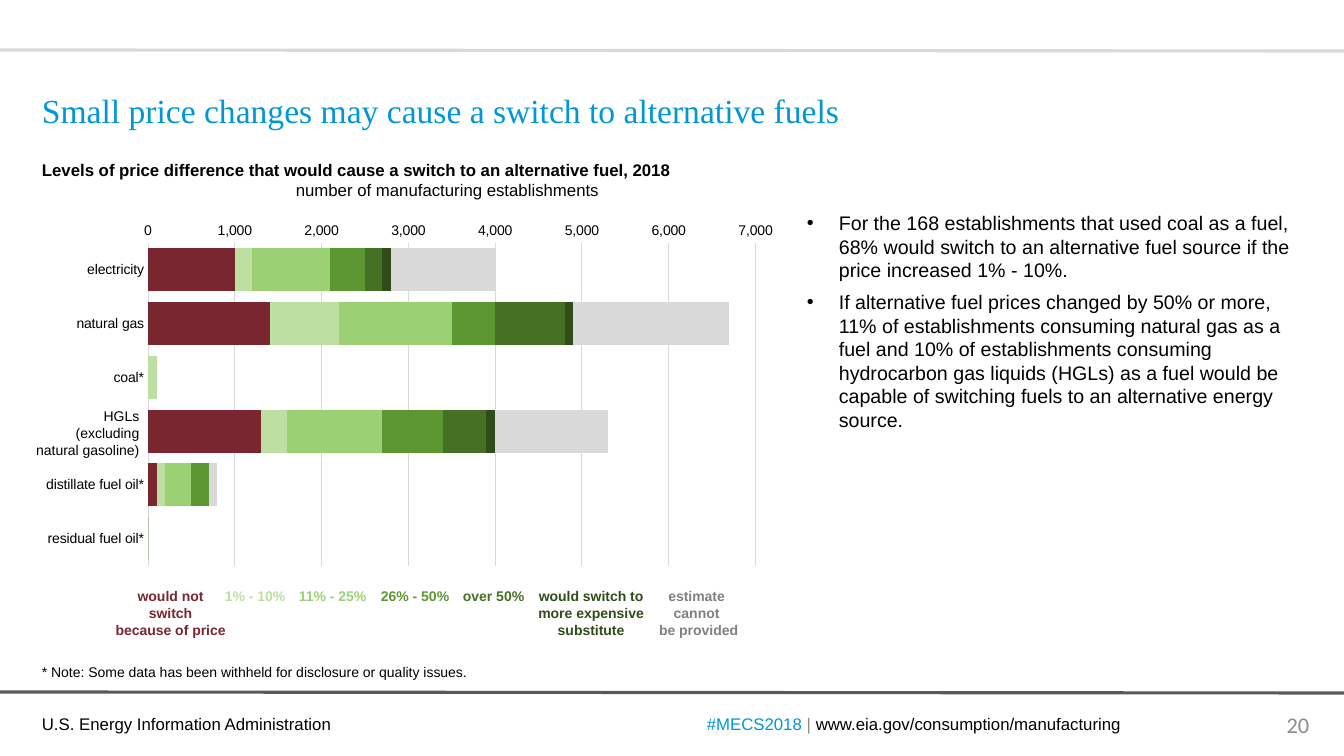
from lxml import etree
from pptx import Presentation
from pptx.chart.data import CategoryChartData
from pptx.dml.color import RGBColor
from pptx.enum.chart import XL_CHART_TYPE as ChartType, XL_TICK_MARK as TickMark
from pptx.enum.shapes import MSO_CONNECTOR as Connector
from pptx.enum.text import MSO_ANCHOR as Anchor, PP_ALIGN as Align
from pptx.oxml import parse_xml
from pptx.oxml.ns import nsdecls, qn
from pptx.util import Emu, Pt

BLACK = RGBColor(0x00, 0x00, 0x00)
BLUE = RGBColor(0x00, 0x96, 0xD7)
RULE_DARK = RGBColor(0x59, 0x59, 0x59)
LIGHT_GRAY = RGBColor(0xD9, 0xD9, 0xD9)
LABEL_GRAY = RGBColor(0x80, 0x80, 0x80)
FOOTER_GRAY = RGBColor(0x8C, 0x8C, 0x8C)
MAROON = RGBColor(0x7A, 0x26, 0x30)
GREEN_1 = RGBColor(0xBD, 0xE0, 0xA2)
GREEN_2 = RGBColor(0x9B, 0xD1, 0x74)
GREEN_3 = RGBColor(0x5D, 0x97, 0x32)
GREEN_4 = RGBColor(0x46, 0x71, 0x25)
GREEN_5 = RGBColor(0x2F, 0x4C, 0x19)

# Content
TITLE = "Small price changes may cause a switch to alternative fuels"
CHART_TITLE = "Levels of price difference that would cause a switch to an alternative fuel, 2018"
CHART_UNIT = "number of manufacturing establishments"
NOTE = "* Note: Some data has been withheld for disclosure or quality issues."
AGENCY = "U.S. Energy Information Administration"
FOOTER = [("#MECS2018 ", BLUE), ("| ", FOOTER_GRAY),
          ("www.eia.gov/consumption/manufacturing", BLACK)]
PAGE = "20"
BULLETS = [
    "For the 168 establishments that used coal as a fuel, 68% would switch to an "
    "alternative fuel source if the price increased 1% - 10%.",
    "If alternative fuel prices changed by 50% or more, 11% of establishments consuming "
    "natural gas as a fuel and 10% of establishments consuming hydrocarbon gas liquids "
    "(HGLs) as a fuel would be capable of switching fuels to an alternative energy source.",
]
FUELS = ["electricity", "natural gas", "coal*", "", "distillate fuel oil*", "residual fuel oil*"]
HGL_LABEL = ["HGLs ", "(excluding ", "natural gasoline) "]
# Name, bar colour, values by fuel
RESPONSES = [
    ("Series 1", MAROON, (1000, 1400, 0, 1300, 100, None)),
    ("Series 2", GREEN_1, (200, 800, 100, 300, 100, 0)),
    ("Series 3", GREEN_2, (900, 1300, 0, 1100, 300, 0)),
    ("Series 4", GREEN_3, (400, 500, None, 700, 200, 0)),
    ("Series 5", GREEN_4, (200, 800, None, 500, None, 0)),
    ("Series 6", GREEN_5, (100, 100, None, 100, None, None)),
    ("Series 7", LIGHT_GRAY, (1200, 1800, 0, 1300, 100, 0)),
]
# Lines, colour, left, width
LEGEND = [
    (["would not ", "switch ", "because of price "], MAROON, 105, 135),
    (["1% - 10%"], GREEN_1, 215, 86),
    (["11% - 25%"], GREEN_2, 289, 93),
    (["26% - 50%"], GREEN_3, 371, 93),
    (["over 50%"], GREEN_4, 453, 86),
    (["would switch to ", "more expensive ", "substitute "], GREEN_5, 528, 130),
    (["estimate ", "cannot ", "be provided"], LABEL_GRAY, 648, 101),
]
PLOT = {"x": 0.153, "y": 0.102, "w": 0.808, "h": 0.85}


def px(length):
    return Emu(round(length * 914400 / 100.8))


def style(font, size, color, name="Arial", bold=False):
    font.size, font.name, font.bold = Pt(size), name, bold
    font.color.rgb = color


def add_text(box, lines, size, color, name="Arial", bold=False,
             align=Align.LEFT, anchor=Anchor.TOP, wrap=True):
    frame = slide.shapes.add_textbox(*map(px, box)).text_frame
    frame.word_wrap, frame.vertical_anchor = wrap, anchor
    frame.text = "\n".join(lines)
    for paragraph in frame.paragraphs:
        paragraph.alignment = align
        style(paragraph.font, size, color, name, bold)
    return frame


def add_rule(y_start, y_end, color):
    rule = slide.shapes.add_connector(Connector.STRAIGHT, 0, px(y_start), px(1344), px(y_end))
    rule.line.color.rgb, rule.line.width = color, Pt(2.25)
    etree.SubElement(rule._element.spPr, qn("a:effectLst"))


presentation = Presentation()
presentation.slide_width, presentation.slide_height = px(1344), px(756)
slide = presentation.slides.add_slide(presentation.slide_layouts[6])

# Rules and footer
add_rule(692, 693, RULE_DARK)
add_rule(50, 51, LIGHT_GRAY)
add_text((32, 709, 373, 30), [AGENCY], 12, BLACK)
footer = add_text((687, 704, 454, 40), [], 12, BLACK, align=Align.CENTER, anchor=Anchor.MIDDLE)
for text, color in FOOTER:
    run = footer.paragraphs[0].add_run()
    run.text = text
    run.font.color.rgb = color
add_text((1268, 705, 60, 40), [PAGE], 16, FOOTER_GRAY, "Calibri",
         align=Align.CENTER, anchor=Anchor.MIDDLE)

# Stacked bar chart
chart_data = CategoryChartData(number_format="#,##0")
chart_data.categories = FUELS
for name, color, values in RESPONSES:
    chart_data.add_series(name, values)
chart = slide.shapes.add_chart(ChartType.BAR_STACKED, *map(px, (33, 204, 752, 380)),
                               chart_data).chart
chart.has_legend = chart.has_title = False
style(chart.font, 10, BLACK)
plot = chart.plots[0]
plot.gap_width, plot.overlap, plot.vary_by_categories = 25, 100, False
for series, (name, color, values) in zip(plot.series, RESPONSES):
    series.format.fill.solid()
    series.format.fill.fore_color.rgb = color
    series.invert_if_negative = False

fuel_axis, count_axis = chart.category_axis, chart.value_axis
for axis in (fuel_axis, count_axis):
    axis.major_tick_mark = axis.minor_tick_mark = TickMark.NONE
    style(axis.tick_labels.font, 10, BLACK)
fuel_axis.reverse_order = True
fuel_axis.has_major_gridlines = False
fuel_axis.format.line.color.rgb, fuel_axis.format.line.width = LIGHT_GRAY, Pt(0.75)
count_axis.minimum_scale, count_axis.maximum_scale, count_axis.major_unit = 0, 7000, 1000
count_axis.tick_labels.number_format = "#,##0"
count_axis.tick_labels.number_format_is_linked = False
count_axis.format.line.fill.background()
grid_line = count_axis.major_gridlines.format.line
grid_line.color.rgb, grid_line.width = LIGHT_GRAY, Pt(0.75)

# Fixed plot area inside the chart
plot_area = chart._chartSpace.chart.plotArea
for layout in plot_area.findall(qn("c:layout")):
    plot_area.remove(layout)
sizes = "".join(f'<c:{key} val="{value}"/>' for key, value in PLOT.items())
plot_area.insert(0, parse_xml(
    f'<c:layout {nsdecls("c")}><c:manualLayout><c:layoutTarget val="inner"/>'
    f'<c:xMode val="edge"/><c:yMode val="edge"/>{sizes}</c:manualLayout></c:layout>'))

# Titles and note
add_text((32, 51, 1279, 84), [TITLE], 24, BLUE, "Times New Roman", anchor=Anchor.BOTTOM)
heading = add_text((32, 155, 730, 50), [CHART_TITLE, CHART_UNIT], 12, BLACK, bold=True)
unit = heading.paragraphs[1]
unit.font.bold, unit.alignment = False, Align.CENTER
unit._p.get_or_add_pPr().set("marL", str(px(101)))
add_text((32, 659, 494, 27), [NOTE], 10, BLACK)

# Legend and the three-line fuel label
for lines, color, left, width in LEGEND:
    add_text((left, 583, width, 10 + 17 * len(lines)), lines, 10, color, bold=True,
             align=Align.CENTER if len(lines) > 1 else Align.LEFT, wrap=False)
add_text((24, 403, 129, 61), HGL_LABEL, 10, BLACK, align=Align.RIGHT, wrap=False)

# Bullets
for paragraph in add_text((797, 206, 514, 233), BULLETS, 14, BLACK).paragraphs:
    paragraph.space_after = Pt(6)
    properties = paragraph._p.get_or_add_pPr()
    properties.set("marL", str(px(32)))
    properties.set("indent", str(-px(32)))
    bullet_font = etree.Element(qn("a:buFont"), typeface="Arial")
    bullet = etree.Element(qn("a:buChar"), char="•")
    position = list(properties).index(properties.find(qn("a:spcAft"))) + 1
    properties.insert(position, bullet_font)
    properties.insert(position + 1, bullet)

presentation.save("out.pptx")
